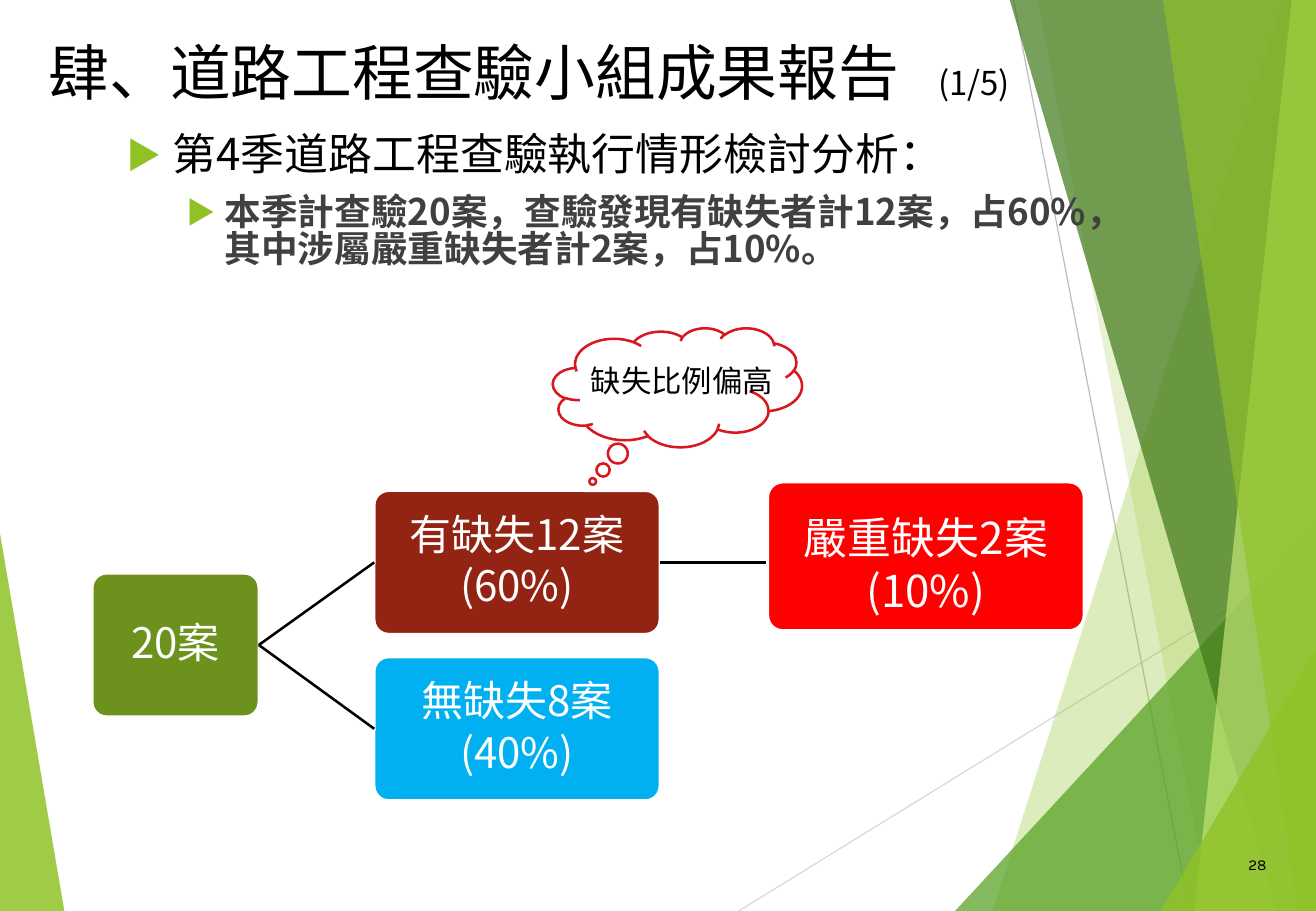
from lxml import etree
from pptx import Presentation
from pptx.dml.color import RGBColor
from pptx.enum.shapes import MSO_CONNECTOR, MSO_SHAPE
from pptx.enum.text import MSO_ANCHOR, MSO_AUTO_SIZE, PP_ALIGN
from pptx.oxml.ns import qn
from pptx.util import Inches, Pt

LINE = MSO_CONNECTOR.STRAIGHT
ROUND, CLOUD = MSO_SHAPE.ROUNDED_RECTANGLE, MSO_SHAPE.CLOUD_CALLOUT
LEFT, CENTER, RIGHT = PP_ALIGN.LEFT, PP_ALIGN.CENTER, PP_ALIGN.RIGHT
TOP, MIDDLE = MSO_ANCHOR.TOP, MSO_ANCHOR.MIDDLE
NO_FIT = MSO_AUTO_SIZE.NONE
CJK = "Noto Sans CJK SC"
COLORS = {
    "lime": "90C226", "green": "54A021", "dark": "3F7819", "pale": "C0E474",
    "olive": "6C921D", "brown": "932313", "red": "FF0000", "blue": "00B0F0",
    "cloud": "D7181F", "black": "000000", "gray": "404040", "white": "FFFFFF",
    "rule": "D9D9D9", "steel": "BFBFBF",
}
FACETS = [
    ("lime", 85, [(0, 4.39), (0.53, 7.5), (0, 7.5)]),
    ("lime", 30, [(10.56, 0), (8.17, 7.5), (10.83, 7.5), (10.83, 0)]),
    ("lime", 20, [(8.54, 0), (9.96, 7.5), (10.83, 7.5), (10.83, 0)]),
    ("green", 72, [(7.86, 7.5), (10.83, 4.29), (10.83, 7.5)]),
    ("dark", 70, [(8.31, 0), (10.51, 7.5), (10.83, 7.5), (10.83, 0)]),
    ("pale", 70, [(10.63, 0), (9.83, 7.5), (10.83, 7.5), (10.83, 0)]),
    ("lime", 65, [(9.57, 0), (10.68, 7.5), (10.83, 7.5), (10.83, 0)]),
    ("lime", 80, [(9.55, 7.5), (10.83, 5.35), (10.83, 7.5)]),
]


def color(key):
    return RGBColor.from_string(COLORS[key])


def style(para, size, key, face=CJK, bold=False, align=LEFT):
    para.alignment = align
    font = para.font
    font.size, font.bold, font.name = Pt(size), bold, face
    font.color.rgb = color(key)
    props = para._p.get_or_add_pPr().find(qn("a:defRPr"))
    etree.SubElement(props, qn("a:ea")).set("typeface", CJK)


def add_facet(slide, key, alpha, points):
    spots = [(Inches(x), Inches(y)) for x, y in points]
    form = slide.shapes.build_freeform(*spots[0], scale=1.0)
    form.add_line_segments(spots[1:], close=True)
    shape = form.convert_to_shape()
    shape.shadow.inherit = False
    shape.line.fill.background()
    shape.fill.solid()
    shape.fill.fore_color.rgb = color(key)
    tint = shape._element.spPr.find(".//" + qn("a:srgbClr"))
    etree.SubElement(tint, qn("a:alpha")).set("val", str(alpha * 1000))


def add_line(slide, start, end, key, width):
    ends = [Inches(v) for v in (*start, *end)]
    line = slide.shapes.add_connector(LINE, *ends)
    line.line.color.rgb = color(key)
    line.line.width = Pt(width)
    etree.SubElement(line._element.spPr, qn("a:effectLst"))
    return line


def add_box(slide, left, top, width, height, anchor=TOP):
    box = slide.shapes.add_textbox(*map(Inches, (left, top, width, height)))
    frame = box.text_frame
    frame.word_wrap = True
    frame.vertical_anchor = anchor
    return frame


def add_node(slide, left, top, width, height, key, lines, size=24.9, drop=0):
    node = slide.shapes.add_shape(ROUND, *map(Inches, (left, top, width, height)))
    node.shadow.inherit = False
    node.adjustments[0] = 0.1
    node.fill.solid()
    node.fill.fore_color.rgb = color(key)
    node.line.color.rgb = color("white")
    node.line.width = Pt(1.5)
    frame = node.text_frame
    frame.word_wrap = True
    frame.vertical_anchor = MIDDLE
    frame.margin_left = frame.margin_right = frame.margin_bottom = Inches(0.02)
    frame.margin_top = Inches(0.02 + drop)
    frame.text = "\n".join(lines)
    for para in frame.paragraphs:
        para.line_spacing = 0.9
        para.space_after = Pt(3.5)
        style(para, size, "white", align=CENTER)
    return node


def join(slide, start, end):
    line = add_line(slide, (0, 0), (1, 1), "black", 1.5)
    line.begin_connect(start, 3)
    line.end_connect(end, 1)


def add_bullet(para, text, indent, hang, size, key, bold=False):
    para.text = text
    para.line_spacing = 0.83
    props = para._p.get_or_add_pPr()
    props.set("marL", str(Inches(indent)))
    props.set("indent", str(-Inches(hang)))
    tint = etree.SubElement(props, qn("a:buClr"))
    etree.SubElement(tint, qn("a:srgbClr")).set("val", COLORS["lime"])
    etree.SubElement(props, qn("a:buSzPct")).set("val", "80000")
    etree.SubElement(props, qn("a:buFont")).set("typeface", CJK)
    etree.SubElement(props, qn("a:buChar")).set("char", "▶")
    style(para, size, key, bold=bold)


def add_title(slide):
    title = slide.shapes.title
    title.left, title.top = Inches(0.3), Inches(0.24)
    title.width, title.height = Inches(9.47), Inches(1.56)
    frame = title.text_frame
    frame.auto_size = NO_FIT
    frame.vertical_anchor = TOP
    para = frame.paragraphs[0]
    tabs = etree.SubElement(para._p.get_or_add_pPr(), qn("a:tabLst"))
    etree.SubElement(tabs, qn("a:tab"), pos=str(Inches(7.32)), algn="l")
    style(para, 36, "black")
    para.add_run().text = "肆、道路工程查驗小組成果報告\t"
    count = para.add_run()
    count.text = "(1/5)"
    count.font.size = Pt(19.5)


def add_body(slide):
    frame = add_box(slide, 0.94, 1.07, 8.44, 1.5)
    add_bullet(frame.paragraphs[0], "第4季道路工程查驗執行情形檢討分析：",
               0.38, 0.38, 26, "black")
    para = frame.add_paragraph()
    para.space_before = Pt(10)
    add_bullet(para, "本季計查驗20案，查驗發現有缺失者計12案，占60%，"
               "其中涉屬嚴重缺失者計2案，占10%。", 0.81, 0.31, 21.7, "gray", True)


def add_tree(slide):
    root = add_node(slide, 0.76, 4.72, 1.37, 1.18, "olive", ["20案"])
    flawed = add_node(slide, 3.08, 4.04, 2.35, 1.18, "brown", ["有缺失12案", "(60%)"])
    clean = add_node(slide, 3.08, 5.41, 2.35, 1.18, "blue", ["無缺失8案", "(40%)"])
    add_node(slide, 6.32, 3.97, 2.6, 1.22, "red", ["嚴重缺失2案", "(10%)"], 26, 0.17)
    join(slide, root, flawed)
    join(slide, root, clean)
    link = add_line(slide, (5.43, 4.63), (6.3, 4.63), "black", 1.5)
    link.begin_connect(flawed, 3)


def add_cloud(slide):
    cloud = slide.shapes.add_shape(CLOUD, *map(Inches, (4.55, 2.7, 2.05, 0.98)))
    cloud.shadow.inherit = False
    cloud.adjustments[0], cloud.adjustments[1] = -0.34, 0.79
    cloud.fill.background()
    cloud.line.color.rgb = color("cloud")
    cloud.line.width = Pt(1.5)
    para = add_box(slide, 4.69, 2.93, 1.77, 0.4).paragraphs[0]
    para.text = "缺失比例偏高"
    style(para, 18, "black", "Arial", align=RIGHT)


def add_number(slide):
    para = add_box(slide, 9.91, 6.9, 0.61, 0.43, MIDDLE).paragraphs[0]
    para.text = "28"
    style(para, 9, "black", "Karla", align=RIGHT)


def main():
    deck = Presentation()
    deck.slide_width, deck.slide_height = Inches(10.83), Inches(7.5)
    slide = deck.slides.add_slide(deck.slide_layouts[5])
    add_facet(slide, *FACETS[0])
    add_line(slide, (6.08, 7.5), (10.83, 4.57), "rule", 0.75)
    add_line(slide, (8.34, 0), (9.79, 7.5), "steel", 0.75)
    for facet in FACETS[1:]:
        add_facet(slide, *facet)
    add_title(slide)
    add_body(slide)
    add_number(slide)
    add_tree(slide)
    add_cloud(slide)
    deck.save("out.pptx")


if __name__ == "__main__":
    main()
